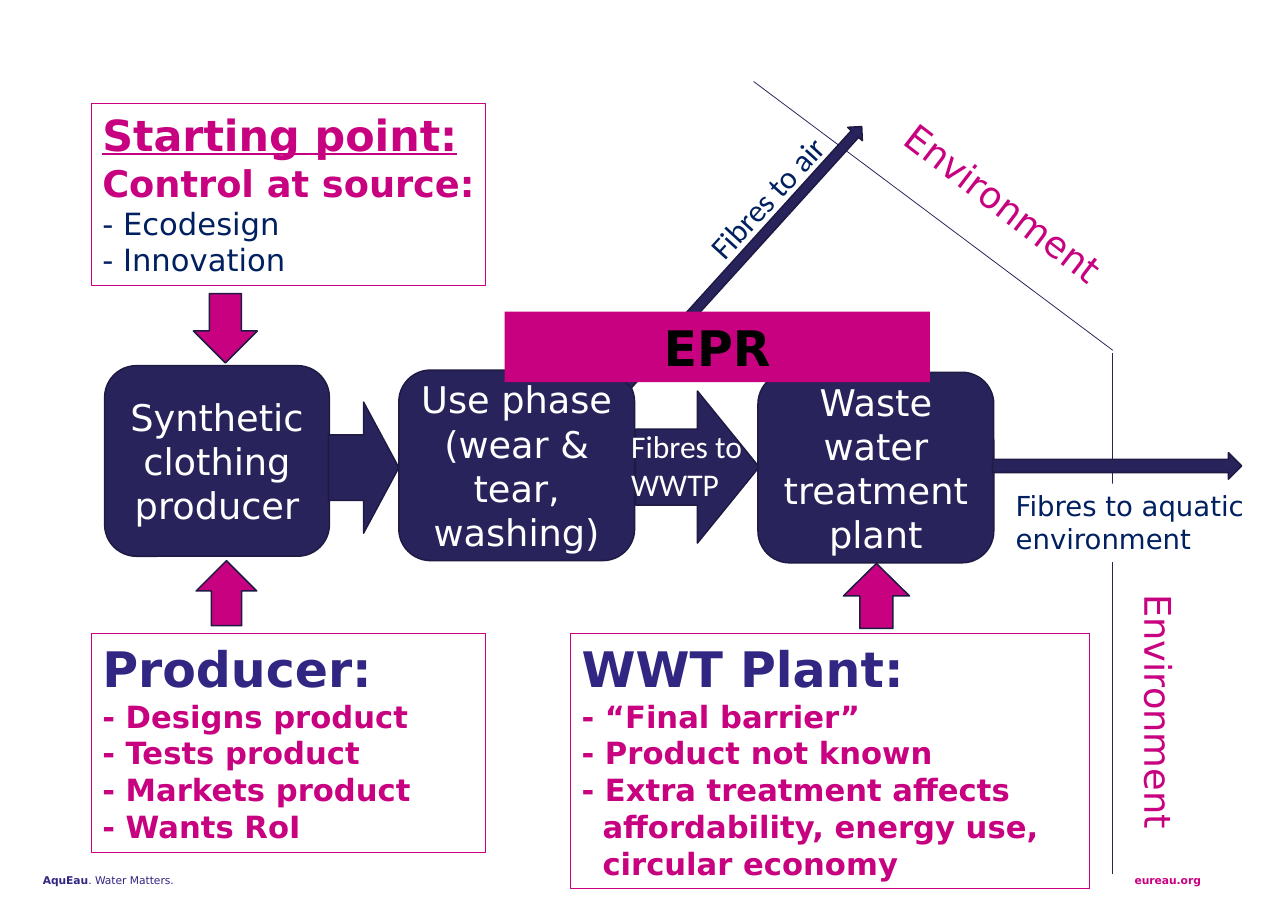
import pptx
import pptx.dml.color
import pptx.enum.shapes
import pptx.enum.text
import pptx.oxml.ns
import pptx.util
import lxml.etree

RGBColor = pptx.dml.color.RGBColor
Shape = pptx.enum.shapes.MSO_SHAPE
Align = pptx.enum.text.PP_ALIGN
Anchor = pptx.enum.text.MSO_ANCHOR

NAVY = RGBColor(0x29, 0x23, 0x5C)
OUTLINE = RGBColor(0x1E, 0x1A, 0x44)
VIOLET = RGBColor(0x31, 0x27, 0x83)
MAGENTA = RGBColor(0xC7, 0x01, 0x7F)
DARK_BLUE = RGBColor(0x00, 0x20, 0x60)
WHITE = RGBColor(0xFF, 0xFF, 0xFF)
BLACK = RGBColor(0x00, 0x00, 0x00)

EMU_PER_PX = 9144  # 100 px to the inch
HANGING_INDENT = 19


def px(length):
    return pptx.util.Emu(length * EMU_PER_PX)


class FlowSlide:
    font_name = "DejaVu Sans"
    label_font = "Calibri"

    def __init__(self, slide):
        self.slide = slide

    def add_paragraphs(self, shape, paragraphs, align=Align.LEFT, anchor=Anchor.TOP, font=None):
        """Fill a shape with paragraphs, each a list of (text, size, colour, bold, underline) runs."""
        frame = shape.text_frame
        frame.word_wrap = True
        frame.vertical_anchor = anchor
        for index, runs in enumerate(paragraphs):
            paragraph = frame.add_paragraph() if index else frame.paragraphs[0]
            paragraph.alignment = align
            if runs[0][0].startswith("- "):
                properties = paragraph._p.get_or_add_pPr()
                properties.set("marL", str(px(HANGING_INDENT)))
                properties.set("indent", str(px(-HANGING_INDENT)))
            for text, size, color, bold, underline in runs:
                run = paragraph.add_run()
                run.text = text
                run.font.name = font or self.font_name
                run.font.size = pptx.util.Pt(size)
                run.font.color.rgb = color
                run.font.bold = bold
                run.font.underline = underline

    def block(self, kind, box, fill=None, line=None, line_width=1, rotation=0):
        shape = self.slide.shapes.add_shape(kind, *map(px, box))
        shape.shadow.inherit = False
        shape.rotation = rotation
        if fill is None:
            shape.fill.background()
        else:
            shape.fill.solid()
            shape.fill.fore_color.rgb = fill
        if line is None:
            shape.line.fill.background()
        else:
            shape.line.color.rgb = line
            shape.line.width = pptx.util.Pt(line_width)
        return shape

    def stage(self, box, text):
        shape = self.block(Shape.ROUNDED_RECTANGLE, box, NAVY, OUTLINE)
        self.add_paragraphs(shape, [[(text, 24, WHITE, False, False)]],
                            Align.CENTER, Anchor.MIDDLE)

    def arrow(self, box, fill=NAVY, rotation=0, kind=Shape.RIGHT_ARROW):
        self.block(kind, box, fill, OUTLINE, rotation=rotation)

    def panel(self, box, heading, items, item_color, item_bold):
        """Draw a framed box with a heading paragraph above its dashed items."""
        shape = self.block(Shape.RECTANGLE, box, line=MAGENTA, line_width=0.75)
        dashed = [[("- " + item, 20, item_color, item_bold, False)] for item in items]
        self.add_paragraphs(shape, [heading] + dashed)

    def plate(self, box, fill, text, size, color, bold=False, align=Align.LEFT):
        shape = self.block(Shape.RECTANGLE, box, fill)
        self.add_paragraphs(shape, [[(text, size, color, bold, False)]], align)

    def text(self, box, runs, rotation=0, **style):
        shape = self.slide.shapes.add_textbox(*map(px, box))
        shape.rotation = rotation
        self.add_paragraphs(shape, [runs], **style)

    def environment(self, box, rotation):
        self.text(box, [("Environment", 24, MAGENTA, False, False)], rotation,
                  align=Align.CENTER, anchor=Anchor.MIDDLE)

    def fibre_label(self, box, text, color, rotation=0):
        self.text(box, [(text, 20.6, color, False, False)], rotation, font=self.label_font)

    def boundary(self, start, end):
        line = self.slide.shapes.add_connector(
            pptx.enum.shapes.MSO_CONNECTOR.STRAIGHT, *map(px, start + end))
        line.line.color.rgb = NAVY
        line.line.width = pptx.util.Pt(0.5)
        lxml.etree.SubElement(line._element.spPr, pptx.oxml.ns.qn("a:effectLst"))


def main():
    presentation = pptx.Presentation()
    presentation.slide_width = px(1169)
    presentation.slide_height = px(827)
    flow = FlowSlide(presentation.slides.add_slide(presentation.slide_layouts[6]))

    flow.text((29, 787, 370, 24), [("AquEau", 7, VIOLET, True, False),
                                   (". Water Matters.", 7, VIOLET, False, False)],
              anchor=Anchor.MIDDLE)
    flow.text((1020, 787, 140, 24), [("eureau.org", 7, MAGENTA, True, False)],
              anchor=Anchor.MIDDLE)

    flow.stage((95, 332, 204, 173), "Synthetic clothing producer")
    flow.stage((362, 336, 214, 173), "Use phase (wear & tear, washing)")
    flow.stage((688, 338, 214, 173), "Waste water treatment plant")

    flow.panel((83, 94, 358, 165),
               [("Starting point: ", 28, MAGENTA, True, True),
                ("Control at source:", 24, MAGENTA, True, False)],
               ["Ecodesign", "Innovation"], DARK_BLUE, False)
    flow.panel((83, 575, 358, 199), [("Producer:", 32, VIOLET, True, False)],
               ["Designs product", "Tests product", "Markets product", "Wants RoI"],
               MAGENTA, True)
    flow.panel((518, 575, 471, 232), [("WWT Plant:", 32, VIOLET, True, False)],
               ["“Final barrier”", "Product not known",
                "Extra treatment affects affordability, energy use, circular economy"],
               MAGENTA, True)

    flow.arrow((173, 269, 63, 58), MAGENTA, 90)
    flow.arrow((178, 509, 55, 59), MAGENTA, 180, Shape.DOWN_ARROW)
    flow.arrow((766, 511, 59, 60), MAGENTA, 270)

    flow.boundary((1010, 320), (1010, 793))
    flow.boundary((684, 74), (1010, 318))
    flow.environment((928, 604, 248, 84), 90)
    flow.environment((770, 142, 282, 84), 37.4)

    flow.arrow((901, 411, 226, 24))
    flow.arrow((518, 223, 316, 18), rotation=312.2)
    flow.arrow((298, 365, 64, 119))
    flow.arrow((577, 355, 112, 138))

    flow.fibre_label((612, 145, 190, 45), "Fibres to air", DARK_BLUE, 312.5)
    flow.fibre_label((563, 383, 125, 79), "Fibres to WWTP", WHITE)
    flow.plate((912, 439, 248, 71), WHITE, "Fibres to aquatic environment", 18, DARK_BLUE)
    flow.plate((458, 283, 386, 64), MAGENTA, "EPR", 32, BLACK, True, Align.CENTER)

    presentation.save("out.pptx")


if __name__ == "__main__":
    main()
